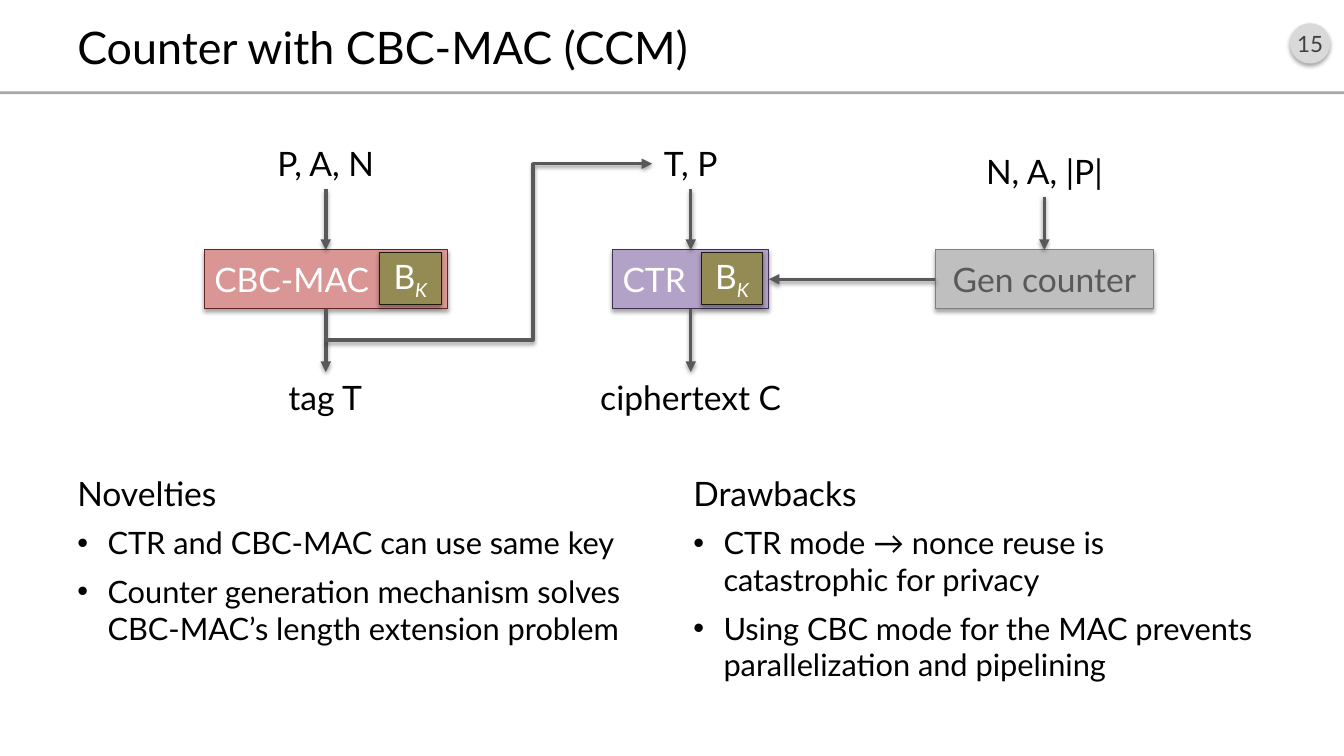
from lxml.etree import SubElement
from pptx import Presentation
from pptx.dml.color import RGBColor
from pptx.enum.shapes import MSO_CONNECTOR, MSO_SHAPE
from pptx.enum.text import MSO_ANCHOR, MSO_AUTO_SIZE, PP_ALIGN
from pptx.oxml.ns import qn
from pptx.util import Pt

FONT = "Lato"
COLORS = {
    "black": "000000", "white": "FFFFFF", "arrow": "595959",
    "badge": "D9D9D9", "badge text": "404040", "rule": "A6A6A6",
    "mac": "D99694", "mac line": "632523",
    "ctr": "B3A2C7", "ctr line": "403152",
    "key": "948A54", "key line": "1E1C11",
    "gen": "BFBFBF", "gen line": "808080",
}
TITLE = "Counter with CBC-MAC (CCM)"
PAGE_NUMBER = "15"
COLUMNS = [
    (48, "Novelties", [
        "CTR and CBC-MAC can use same key",
        "Counter generation mechanism solves CBC-MAC’s length extension problem",
    ]),
    (488, "Drawbacks", [
        "CTR mode → nonce reuse is catastrophic for privacy",
        "Using CBC mode for the MAC prevents parallelization and pipelining",
    ]),
]
MAC_X, CTR_X, GEN_X = 232.7, 493.4, 746
STAGES = [
    ("CBC-MAC", MAC_X, 173.5, "mac", "white", True),
    ("CTR", CTR_X, 111.6, "ctr", "white", True),
    ("Gen counter", GEN_X, 155.6, "gen", "arrow", False),
]
LABELS = [
    ("P, A, N", MAC_X, 98.6, 88.6),
    ("tag T", MAC_X - 0.4, 265.7, 69),
    ("T, P", CTR_X, 98.6, 56),
    ("ciphertext C", CTR_X, 265.7, 148.3),
    ("N, A, |P|", GEN_X, 104.4, 101.5),
]
BOX_TOP, BOX_HEIGHT = 178.5, 42.2
BOX_BOTTOM = BOX_TOP + BOX_HEIGHT
KEY_WIDTH, KEY_HEIGHT, KEY_MARGIN = 44, 37.6, 4.3
FLOW_Y = 199.5
ARROWS = [
    (MAC_X, 135, MAC_X, BOX_TOP),
    (MAC_X, BOX_BOTTOM, MAC_X, 265.7),
    (CTR_X, 135, CTR_X, BOX_TOP),
    (CTR_X, BOX_BOTTOM, CTR_X, 265.7),
    (GEN_X, 140.4, GEN_X, BOX_TOP),
    (GEN_X - 77.8, FLOW_Y, CTR_X + 55.8, FLOW_Y),
]
TAG_FEEDBACK = (MAC_X, 242.8, 465.8, 117)
FEEDBACK_BEND = 63500


def color(name):
    return RGBColor.from_string(COLORS[name])


def format_run(run, size, color_name):
    run.font.name = FONT
    run.font.size = Pt(size)
    run.font.color.rgb = color(color_name)


def set_effects(shape, opacity=None):
    effects = SubElement(shape._element.spPr, qn("a:effectLst"))
    if opacity:
        shadow = SubElement(effects, qn("a:outerShdw"), blurRad=str(Pt(3.1)),
                            dist=str(Pt(1.8)), dir="5400000", rotWithShape="0")
        black = SubElement(shadow, qn("a:srgbClr"), val=COLORS["black"])
        SubElement(black, qn("a:alpha"), val=str(opacity * 1000))


def add_box(slide, kind, left, top, width, height, fill, line=None, opacity=35):
    shape = slide.shapes.add_shape(kind, Pt(left), Pt(top), Pt(width), Pt(height))
    shape.fill.solid()
    shape.fill.fore_color.rgb = color(fill)
    if line:
        shape.line.color.rgb = color(line)
        shape.line.width = Pt(0.75)
    else:
        shape.line.fill.background()
    set_effects(shape, opacity)
    return shape


def write(shape, text, size, color_name, alignment=PP_ALIGN.CENTER):
    frame = shape.text_frame
    frame.text = text
    frame.paragraphs[0].alignment = alignment
    format_run(frame.paragraphs[0].runs[0], size, color_name)
    return frame


def add_stage(slide, name, center, width, fill, text_color, keyed):
    left = center - width / 2
    box = add_box(slide, MSO_SHAPE.RECTANGLE, left, BOX_TOP, width, BOX_HEIGHT,
                  fill, fill + " line")
    alignment = PP_ALIGN.LEFT if keyed else PP_ALIGN.CENTER
    write(box, name, 24, text_color, alignment).word_wrap = not keyed
    if keyed:
        key = add_box(slide, MSO_SHAPE.RECTANGLE, left + width - KEY_WIDTH - KEY_MARGIN,
                      BOX_TOP + 1.6, KEY_WIDTH, KEY_HEIGHT, "key", "key line")
        subscript = write(key, "B", 24, "white").paragraphs[0].add_run()
        subscript.text = "K"
        format_run(subscript, 24, "white")
        subscript.font.italic = True
        subscript._r.get_or_add_rPr().set("baseline", "-25000")


def add_label(slide, text, center, top, width):
    label = slide.shapes.add_textbox(Pt(center - width / 2), Pt(top), Pt(width), Pt(36.4))
    write(label, text, 24, "black").word_wrap = False


def add_arrow(slide, kind, points):
    arrow = slide.shapes.add_connector(kind, *[Pt(value) for value in points])
    arrow.line.color.rgb = color("arrow")
    arrow.line.width = Pt(2.5)
    SubElement(arrow.line._get_or_add_ln(), qn("a:tailEnd"), type="triangle")
    set_effects(arrow, 38)
    return arrow


def place(shape, left, top, width, height):
    shape.left, shape.top = Pt(left), Pt(top)
    shape.width, shape.height = Pt(width), Pt(height)
    shape.text_frame.auto_size = MSO_AUTO_SIZE.NONE


def fill_column(placeholder, left, heading, items):
    place(placeholder, left, 334, 424, 166.3)
    frame = placeholder.text_frame
    frame.text = "\n".join([heading] + items)
    for index, paragraph in enumerate(frame.paragraphs):
        paragraph.space_before = Pt(8)
        format_run(paragraph.runs[0], 22 if index else 24, "black")
        indent = Pt(21.6) if index else 0
        properties = paragraph._p.get_or_add_pPr()
        properties.set("marL", str(indent))
        properties.set("indent", str(-indent))
        if index:
            SubElement(properties, qn("a:buFont"), typeface="Arial")
            SubElement(properties, qn("a:buChar"), char="•")
        else:
            SubElement(properties, qn("a:buNone"))


def main():
    presentation = Presentation()
    presentation.slide_width, presentation.slide_height = Pt(960), Pt(540)
    slide = presentation.slides.add_slide(presentation.slide_layouts[3])
    title, *bodies = slide.placeholders

    badge = add_box(slide, MSO_SHAPE.OVAL, 921.4, 16.6, 28.8, 28.8, "badge")
    badge_frame = write(badge, PAGE_NUMBER, 16, "badge text")
    badge_frame.margin_left = badge_frame.margin_right = 0
    add_box(slide, MSO_SHAPE.RECTANGLE, 0, 65.3, 960, 2, "rule", opacity=None)

    place(title, 48, 11.5, 864, 43.2)
    write(title, TITLE, 32, "black", PP_ALIGN.LEFT).vertical_anchor = MSO_ANCHOR.MIDDLE
    for body, column in zip(bodies, COLUMNS):
        fill_column(body, *column)

    for stage in STAGES:
        add_stage(slide, *stage)
    for label in LABELS:
        add_label(slide, *label)
    for points in ARROWS:
        add_arrow(slide, MSO_CONNECTOR.STRAIGHT, points)
    feedback = add_arrow(slide, MSO_CONNECTOR.ELBOW, TAG_FEEDBACK)
    guides = feedback._element.spPr.find(qn("a:prstGeom")).find(qn("a:avLst"))
    SubElement(guides, qn("a:gd"), name="adj1", fmla=f"val {FEEDBACK_BEND}")

    presentation.save("out.pptx")


if __name__ == "__main__":
    main()
